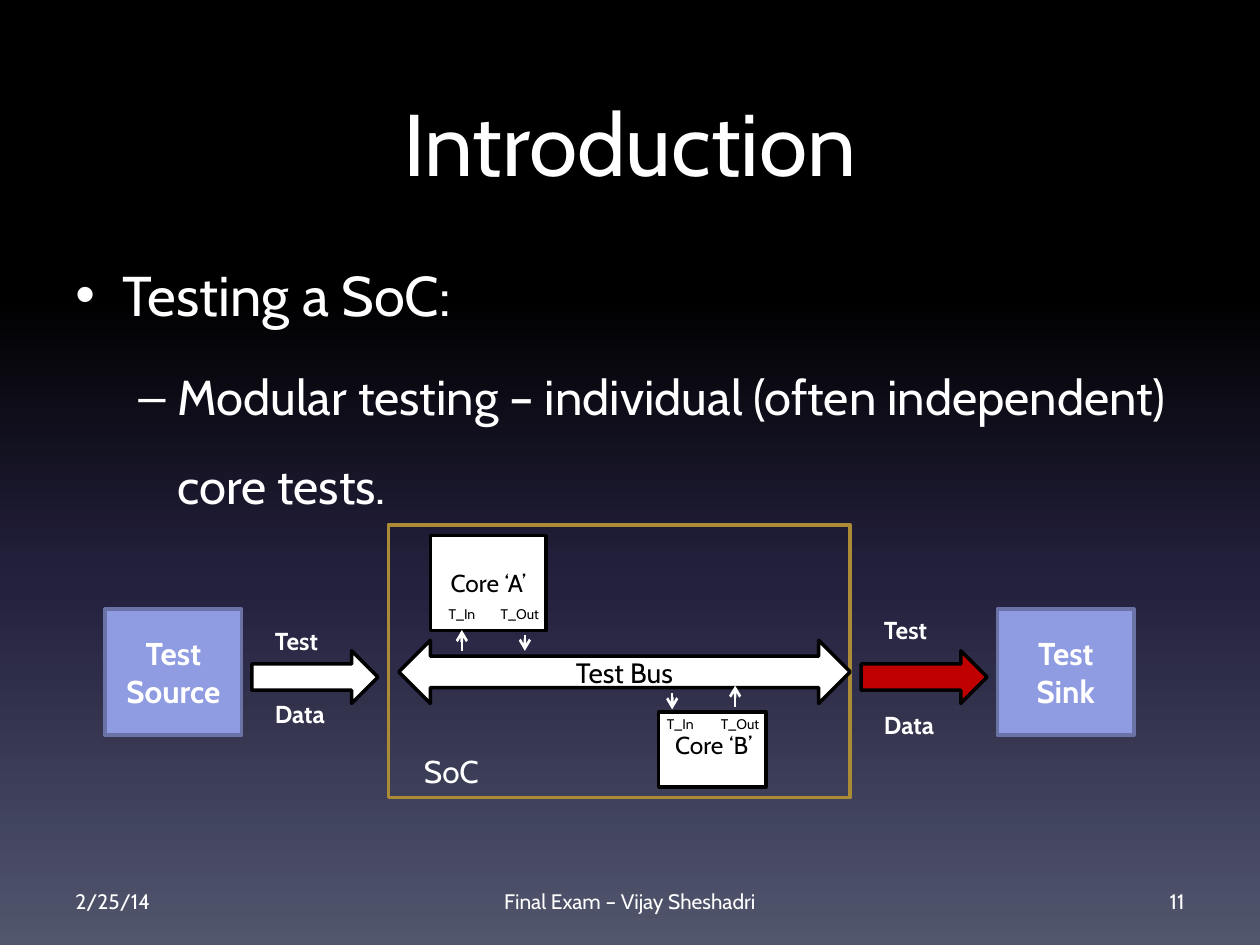
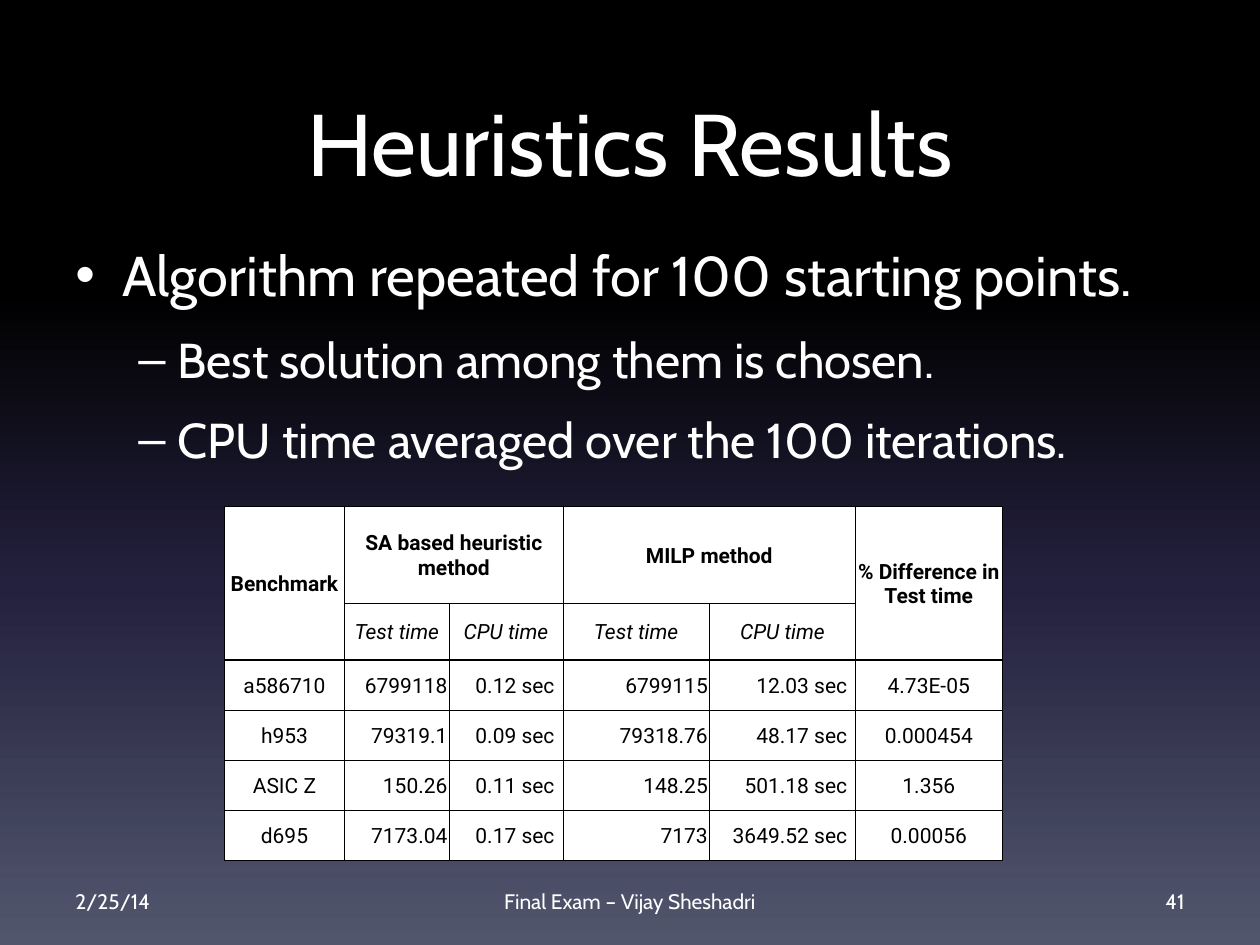
"""Build two slides on SoC testing: the test setup and the heuristics results."""
from lxml.etree import SubElement
from pptx import Presentation
from pptx.dml.color import RGBColor
from pptx.enum.shapes import MSO_CONNECTOR, MSO_SHAPE
from pptx.enum.text import MSO_ANCHOR, MSO_AUTO_SIZE, PP_ALIGN
from pptx.oxml.ns import qn
from pptx.util import Cm, Pt

WHITE = RGBColor(0xFF, 0xFF, 0xFF)
BLACK = RGBColor(0x00, 0x00, 0x00)
PERIWINKLE = RGBColor(0x90, 0x9C, 0xE1)
SLATE = RGBColor(0x6B, 0x73, 0xA6)
GOLD = RGBColor(0xAC, 0x8B, 0x37)
RED = RGBColor(0xC0, 0x00, 0x00)
NIGHT = RGBColor(0x24, 0x21, 0x3E)
DUSK = RGBColor(0x51, 0x56, 0x6D)
BODY_FONT = "Cabin"
TABLE_FONT = "Roboto"


def write(shape, text, size, color=WHITE, align=PP_ALIGN.CENTER, bold=False, anchor=MSO_ANCHOR.TOP):
    frame = shape.text_frame
    frame.word_wrap = True
    frame.auto_size = MSO_AUTO_SIZE.NONE
    frame.vertical_anchor = anchor
    paragraph = frame.paragraphs[0]
    paragraph.text = text
    paragraph.alignment = align
    font = paragraph.font
    font.name, font.size, font.bold = BODY_FONT, Pt(size), bold
    font.color.rgb = color


def add_block(slide, preset, box, fill, outline):
    block = slide.shapes.add_shape(preset, *map(Cm, box))
    block.shadow.inherit = False
    if fill is None:
        block.fill.background()
    else:
        block.fill.solid()
        block.fill.fore_color.rgb = fill
    block.line.color.rgb = outline
    block.line.width = Pt(2)
    return block


prs = Presentation()
prs.slide_width, prs.slide_height = Cm(25.4), Cm(19.05)

backdrop = prs.slide_master.background.fill
backdrop.gradient()
backdrop.gradient_angle = 270
stops = prs.slide_master.element.xpath(".//p:bg//a:gsLst")[0]
for stop in list(stops):
    stops.remove(stop)
for percent, color in [(0, BLACK), (31, BLACK), (62, NIGHT), (100, DUSK)]:
    stop = SubElement(stops, qn("a:gs"), pos=str(percent * 1000))
    SubElement(stop, qn("a:srgbClr"), val=str(color))

outlines = [
    ("Introduction", "11", 1.5, [
        (0, "Testing a SoC:"),
        (1, "Modular testing – individual (often independent) core tests."),
    ]),
    ("Heuristics Results", "41", 1.2, [
        (0, "Algorithm repeated for 100 starting points."),
        (1, "Best solution among them is chosen."),
        (1, "CPU time averaged over the 100 iterations."),
    ]),
]
bullet_levels = [("•", 32, Cm(0.95), Cm(-0.95)), ("–", 28, Cm(2.06), Cm(-0.79))]

slides = []
for heading, number, spacing, points in outlines:
    slide = prs.slides.add_slide(prs.slide_layouts[5])
    slides.append(slide)
    title = slide.shapes.title
    title.left, title.top, title.width, title.height = map(Cm, (1.27, 1.27, 22.86, 3.18))
    write(title, heading, 50, anchor=MSO_ANCHOR.MIDDLE)

    body = slide.shapes.add_textbox(*map(Cm, (1.27, 4.45, 22.86, 12.57))).text_frame
    body.word_wrap = True
    for index, (level, text) in enumerate(points):
        bullet, size, margin, indent = bullet_levels[level]
        point = body.add_paragraph() if index else body.paragraphs[0]
        point.text, point.level = text, level
        point.line_spacing, point.space_before = spacing, Pt(size * 0.2)
        point.font.name, point.font.size = BODY_FONT, Pt(size)
        point.font.color.rgb = WHITE
        properties = point._p.get_or_add_pPr()
        properties.set("marL", str(margin))
        properties.set("indent", str(indent))
        bullet_font = SubElement(properties, qn("a:buFont"))
        bullet_font.set("typeface", "Arial")
        SubElement(properties, qn("a:buChar"), char=bullet)
        properties.remove(bullet_font)
        properties.insert(len(properties) - 1, bullet_font)

    for left, width, text, align in [
        (1.27, 5.93, "2/25/14", PP_ALIGN.LEFT),
        (8.68, 8.04, "Final Exam – Vijay Sheshadri", PP_ALIGN.CENTER),
        (18.2, 5.93, number, PP_ALIGN.RIGHT),
    ]:
        footer = slide.shapes.add_textbox(Cm(left), Cm(17.65), Cm(width), Cm(1.02))
        write(footer, text, 12, align=align, anchor=MSO_ANCHOR.MIDDLE)

intro, results = slides

for left, text in [(2.12, "Test Source"), (20.11, "Test Sink")]:
    endpoint = add_block(intro, MSO_SHAPE.RECTANGLE, (left, 12.28, 2.75, 2.54), PERIWINKLE, SLATE)
    write(endpoint, text, 18, bold=True, anchor=MSO_ANCHOR.MIDDLE)

add_block(intro, MSO_SHAPE.RECTANGLE, (7.83, 10.58, 9.31, 5.5), None, GOLD)
core_a = add_block(intro, MSO_SHAPE.RECTANGLE, (8.68, 10.8, 2.33, 1.91), WHITE, BLACK)
write(core_a, "Core ‘A’", 14, BLACK, anchor=MSO_ANCHOR.MIDDLE)
add_block(intro, MSO_SHAPE.RECTANGLE, (13.28, 14.35, 2.16, 1.52), WHITE, BLACK)
test_bus = add_block(intro, MSO_SHAPE.LEFT_RIGHT_ARROW, (8.04, 12.91, 9.1, 1.27), WHITE, BLACK)
write(test_bus, "Test Bus", 16, BLACK, anchor=MSO_ANCHOR.MIDDLE)

for left, fill, test_top, data_top in [(5.08, WHITE, 12.49, 13.97), (17.36, RED, 12.28, 14.18)]:
    add_block(intro, MSO_SHAPE.RIGHT_ARROW, (left, 13.12, 2.54, 1.06), fill, BLACK)
    for text, top, width in [("Test", test_top, 1.48), ("Data", data_top, 1.69)]:
        flow_label = intro.shapes.add_textbox(Cm(left + 0.21), Cm(top), Cm(width), Cm(0.86))
        write(flow_label, text, 14, align=PP_ALIGN.LEFT, bold=True)

for box, text, size, color in [
    ((13.12, 14.6, 2.54, 0.86), "Core ‘B’", 14, BLACK),
    ((7.83, 15.03, 2.54, 1.02), "SoC", 18, WHITE),
    ((8.68, 12.09, 1.27, 0.61), "T_In", 8, BLACK),
    ((9.74, 12.09, 1.48, 0.61), "T_Out", 8, BLACK),
    ((13.08, 14.3, 1.27, 0.61), "T_In", 8, BLACK),
    ((14.18, 14.3, 1.48, 0.61), "T_Out", 8, BLACK),
]:
    write(intro.shapes.add_textbox(*map(Cm, box)), text, size, color)

for x, start, end in [(9.31, 13.12, 12.7), (10.58, 12.8, 13.12),
                      (13.55, 13.97, 14.3), (14.82, 14.25, 13.82)]:
    signal = intro.shapes.add_connector(MSO_CONNECTOR.STRAIGHT, Cm(x), Cm(start), Cm(x), Cm(end))
    signal.line.color.rgb = WHITE
    signal.line.width = Pt(1.5)
    properties = signal.element.spPr
    SubElement(properties.find(qn("a:ln")), qn("a:tailEnd"), type="arrow")
    SubElement(properties, qn("a:effectLst"))

rows = [
    ("Benchmark", "SA based heuristic method", "", "MILP method", "", "% Difference in Test time"),
    ("", "Test time", "CPU time", "Test time", "CPU time", ""),
    ("a586710", "6799118", "0.12 sec", "6799115", "12.03 sec", "4.73E-05"),
    ("h953", "79319.1", "0.09 sec", "79318.76", "48.17 sec", "0.000454"),
    ("ASIC Z", "150.26", "0.11 sec", "148.25", "501.18 sec", "1.356"),
    ("d695", "7173.04", "0.17 sec", "7173", "3649.52 sec", "0.00056"),
]
column_widths = [2.43, 2.1, 2.3, 2.95, 2.95, 2.95]
row_heights = [1.96, 1.14] + [1.01] * 4
benchmarks = results.shapes.add_table(
    len(rows), len(column_widths), Cm(4.52), Cm(10.21), Cm(sum(column_widths)), Cm(sum(row_heights))
).table
benchmarks.first_row = benchmarks.horz_banding = False
for column, width in zip(benchmarks.columns, column_widths):
    column.width = Cm(width)
for row, height in zip(benchmarks.rows, row_heights):
    row.height = Cm(height)
for first, last in [((0, 0), (1, 0)), ((0, 1), (0, 2)), ((0, 3), (0, 4)), ((0, 5), (1, 5))]:
    benchmarks.cell(*first).merge(benchmarks.cell(*last))

for r, values in enumerate(rows):
    for c, value in enumerate(values):
        cell = benchmarks.cell(r, c)
        is_measure = r > 1 and 0 < c < 5
        is_cpu_time = is_measure and c % 2 == 0
        cell.margin_left = cell.margin_top = Cm(0.03)
        cell.margin_right = Cm(0.17 if is_cpu_time else 0.03)
        cell.margin_bottom = 0
        cell.vertical_anchor = MSO_ANCHOR.MIDDLE
        properties = cell._tc.get_or_add_tcPr()
        above_data = r + cell.span_height == 2
        for side, heavy in [("L", False), ("R", False), ("T", r == 2), ("B", above_data)]:
            border = SubElement(properties, qn(f"a:ln{side}"), w=str(Pt(1.5 if heavy else 0.5)))
            SubElement(SubElement(border, qn("a:solidFill")), qn("a:srgbClr"), val=str(BLACK))
        cell.fill.solid()
        cell.fill.fore_color.rgb = WHITE
        entry = cell.text_frame.paragraphs[0]
        entry.text = value
        entry.alignment = PP_ALIGN.RIGHT if is_measure else PP_ALIGN.CENTER
        entry.font.name, entry.font.size = TABLE_FONT, Pt(12)
        entry.font.bold, entry.font.italic = r == 0, r == 1
        entry.font.color.rgb = BLACK

prs.save("out.pptx")
